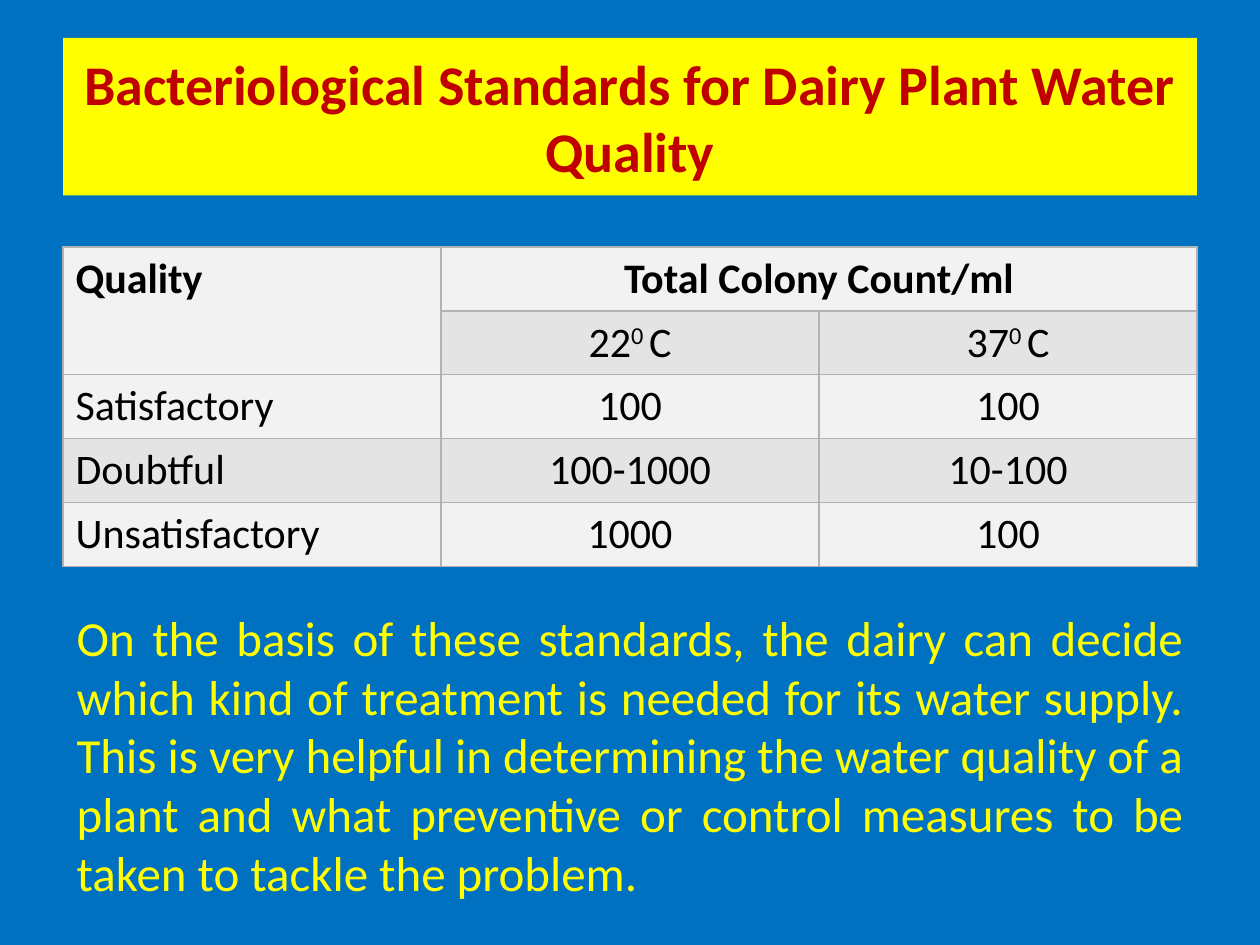
from lxml import etree
from pptx import Presentation
from pptx.dml.color import RGBColor
from pptx.enum.text import MSO_ANCHOR, MSO_AUTO_SIZE, PP_ALIGN
from pptx.oxml.ns import qn
from pptx.util import Inches, Pt

LEFT, MID, FULL = PP_ALIGN.LEFT, PP_ALIGN.CENTER, PP_ALIGN.JUSTIFY
CENTER = MSO_ANCHOR.MIDDLE
GROW = MSO_AUTO_SIZE.SHAPE_TO_FIT_TEXT
HUES = {"back": "0070C0", "banner": "FFFF00", "title": "C00000", "note": "FFFF00",
        "cell": "000000", "odd": "F2F2F2", "even": "E4E4E4", "edge": "B2B2B2"}
ROWS = [
    [["Quality"], ["Total Colony Count/ml"], []],
    [[], ["22", "0 ", "C"], ["37", "0 ", "C"]],
    [["Satisfactory"], ["100"], ["100"]],
    [["Doubtful"], ["100-1000"], ["10-100"]],
    [["Unsatisfactory"], ["1000"], ["100"]],
]
SPANS = [((0, 0), (1, 0)), ((0, 1), (0, 2))]
NOTE = ("On the basis of these standards, the dairy can decide which kind of treatment "
        "is needed for its water supply. This is very helpful in determining the water "
        "quality of a plant and what preventive or control measures to be taken to "
        "tackle the problem.")


class Deck:
    font = "Calibri"
    col, row = Inches(0.5), Inches(0.25)

    def __init__(self):
        self.file = Presentation()
        self.file.slide_width, self.file.slide_height = 20 * self.col, 30 * self.row
        self.slide = self.file.slides.add_slide(self.file.slide_layouts[5])
        self.paint(self.slide.background.fill, "back")

    def paint(self, fill, hue):
        fill.solid()
        fill.fore_color.rgb = RGBColor.from_string(HUES[hue])

    def area(self, x, y, w, h):
        return [int(n) for n in (x * self.col, y * self.row, w * self.col, h * self.row)]

    def words(self, frame, parts, size, hue, align, bold=False):
        para = frame.paragraphs[0]
        para.alignment = align
        for spot, part in enumerate(parts):
            run = para.add_run()
            run.text = part
            run.font.name, run.font.size, run.font.bold = self.font, Pt(size), bold
            run.font.color.rgb = RGBColor.from_string(HUES[hue])
            if spot == 1:
                run.font._element.set("baseline", "30000")

    def title(self, text, *box):
        shape = self.slide.shapes.title
        shape.left, shape.top, shape.width, shape.height = self.area(*box)
        self.paint(shape.fill, "banner")
        shape.text_frame.vertical_anchor = CENTER
        self.words(shape.text_frame, [text], 32, "title", MID, True)

    def edge(self, cell):
        props = cell._tc.get_or_add_tcPr()
        for side in ("lnL", "lnR", "lnT", "lnB"):
            line = etree.SubElement(props, qn(f"a:{side}"), w=str(Pt(1)))
            fill = etree.SubElement(line, qn("a:solidFill"))
            etree.SubElement(fill, qn("a:srgbClr"), val=HUES["edge"])

    def table(self, rows, spans, *box):
        grid = self.slide.shapes.add_table(len(rows), len(rows[0]), *self.area(*box)).table
        for r, row in enumerate(rows):
            for c, parts in enumerate(row):
                cell = grid.cell(r, c)
                self.edge(cell)
                self.paint(cell.fill, "even" if r % 2 else "odd")
                self.words(cell.text_frame, parts, 24, "cell", MID if c else LEFT, r == 0)
        for start, end in spans:
            grid.cell(*start).merge(grid.cell(*end))

    def note(self, text, *box):
        frame = self.slide.shapes.add_textbox(*self.area(*box)).text_frame
        frame.word_wrap = True
        frame.auto_size = GROW
        self.words(frame, [text], 28, "note", FULL)


def main():
    deck = Deck()
    deck.title("Bacteriological Standards for Dairy Plant Water Quality", 1, 1.2, 18, 5)
    deck.table(ROWS, SPANS, 1, 7.84, 18, 10)
    deck.note(NOTE, 1.02, 19.08, 17.96, 9.84)
    deck.file.save("out.pptx")


if __name__ == "__main__":
    main()
